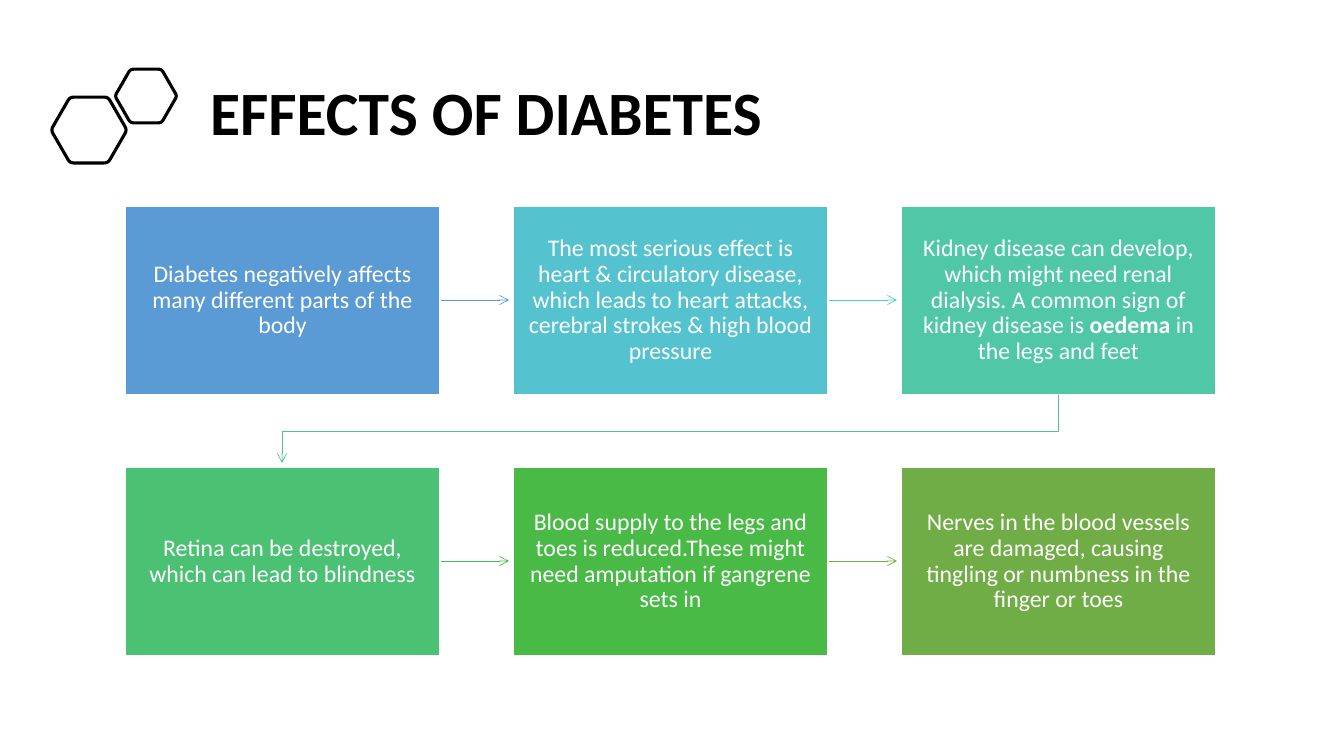
import math

from lxml import etree
from pptx import Presentation
from pptx import util as u
from pptx.dml.color import RGBColor
from pptx.enum import shapes, text
from pptx.oxml import ns

PX = 914400 / 100.8

STEPS = [
    ("5B9BD5", "Diabetes negatively affects many different parts of the body"),
    ("55C3CF", "The most serious effect is heart & circulatory disease, which leads to "
               "heart attacks, cerebral strokes & high blood pressure"),
    ("50C8A7", "Kidney disease can develop, which might need renal dialysis. A common "
               "sign of kidney disease is **oedema** in the legs and feet"),
    ("4BC174", "Retina can be destroyed, which can lead to blindness"),
    ("4ABA46", "Blood supply to the legs and toes is reduced.These might need "
               "amputation if gangrene sets in"),
    ("70AD47", "Nerves in the blood vessels are damaged, causing tingling or numbness "
               "in the finger or toes"),
]
ARROWS = ["5B9BD5", "54CCCD", "4DC58D", "48BB4F", "70AD47"]


def px(n):
    return u.Emu(round(n * PX))


def rgb(value):
    return RGBColor.from_string(value)


class Deck:
    """Holds the style and the current slide, and draws each kind of element."""

    font = "Calibri"

    def __init__(self, width, height):
        self.prs = Presentation()
        self.prs.slide_width, self.prs.slide_height = px(width), px(height)
        self.s = self.prs.slides.add_slide(self.prs.slide_layouts[5])

    def style(self, p, size, color):
        p.line_spacing = 0.9
        for r in p.runs:
            r.font.name, r.font.size = self.font, u.Pt(size)
            r.font.color.rgb = rgb(color)

    def stroke(self, sp, color, width):
        sp.line.color.rgb = rgb(color)
        sp.line.width = u.Pt(width)

    def arrowhead(self, sp):
        ln = sp.line._get_or_add_ln()
        etree.SubElement(ln, ns.qn("a:tailEnd"), type="arrow")

    def title(self, words, x, y, w, h):
        sp = self.s.shapes.title
        sp.left, sp.top, sp.width, sp.height = map(px, (x, y, w, h))
        tf = sp.text_frame
        tf.text = words
        tf.auto_size = text.MSO_AUTO_SIZE.NONE
        tf.vertical_anchor = text.MSO_ANCHOR.MIDDLE
        p = tf.paragraphs[0]
        p.alignment = text.PP_ALIGN.LEFT
        self.style(p, 44, "000000")
        p.runs[0].font.bold = True

    def box(self, words, fill, x, y, w, h):
        sp = self.s.shapes.add_shape(shapes.MSO_SHAPE.RECTANGLE, *map(px, (x, y, w, h)))
        sp.shadow.inherit = False
        sp.fill.solid()
        sp.fill.fore_color.rgb = rgb(fill)
        self.stroke(sp, "FFFFFF", 1)
        tf = sp.text_frame
        tf.word_wrap = True
        tf.vertical_anchor = text.MSO_ANCHOR.MIDDLE
        tf.margin_left = tf.margin_right = px(15)
        tf.margin_top = tf.margin_bottom = px(16)
        p = tf.paragraphs[0]
        p.alignment = text.PP_ALIGN.CENTER
        for i, part in enumerate(words.split("**")):
            r = p.add_run()
            r.text = part
            r.font.bold = i % 2 == 1
        self.style(p, 17, "FFFFFF")

    def arrow(self, x1, y1, x2, y2, color):
        sp = self.s.shapes.add_connector(
            shapes.MSO_CONNECTOR.STRAIGHT, *map(px, (x1, y1, x2, y2)))
        etree.SubElement(sp._element.spPr, ns.qn("a:effectLst"))
        self.stroke(sp, color, 0.5)
        self.arrowhead(sp)

    def outline(self, points, color, width, close=True):
        start, *rest = [(px(x), px(y)) for x, y in points]
        fb = self.s.shapes.build_freeform(*start)
        fb.add_line_segments(rest, close=close)
        sp = fb.convert_to_shape()
        sp.shadow.inherit = False
        sp.fill.background()
        self.stroke(sp, color, width)
        return sp

    def bent_arrow(self, points, color):
        self.arrowhead(self.outline(points, color, 0.5, close=False))

    def hexagon(self, cx, cy, radius):
        corners = [(cx + radius * math.cos(k * math.pi / 3),
                    cy + radius * math.sin(k * math.pi / 3)) for k in range(6)]
        points = []
        for k, corner in enumerate(corners):
            before, after = corners[k - 1], corners[(k + 1) % 6]
            for t in (0, 0.25, 0.5, 0.75, 1):
                a, b = 0.1 * (1 - t) ** 2, 0.1 * t ** 2
                points.append(tuple(c + a * (m - c) + b * (n - c)
                                    for c, m, n in zip(corner, before, after)))
        self.outline(points, "000000", 2.25)


def main():
    deck = Deck(1344, 756)
    deck.title("EFFECTS OF DIABETES", 200, 57, 1090, 118)
    deck.hexagon(89, 130, 38)
    deck.hexagon(146, 96, 31)

    left, top, w, h, step_x, step_y = 125, 206, 315, 189, 388, 261
    for i, (fill, words) in enumerate(STEPS):
        row, col = divmod(i, 3)
        x, y = left + col * step_x, top + row * step_y
        deck.box(words, fill, x, y, w, h)
        if col < 2:
            mid = y + h // 2
            deck.arrow(x + w + 1, mid, x + step_x - 4, mid, ARROWS[i])

    first, last = left + w // 2, left + 2 * step_x + w // 2
    bottom, bend, end = top + h, top + h + 36, top + step_y - 4
    deck.bent_arrow([(last, bottom), (last, bend), (first, bend), (first, end)], ARROWS[2])
    deck.prs.save("out.pptx")


if __name__ == "__main__":
    main()
